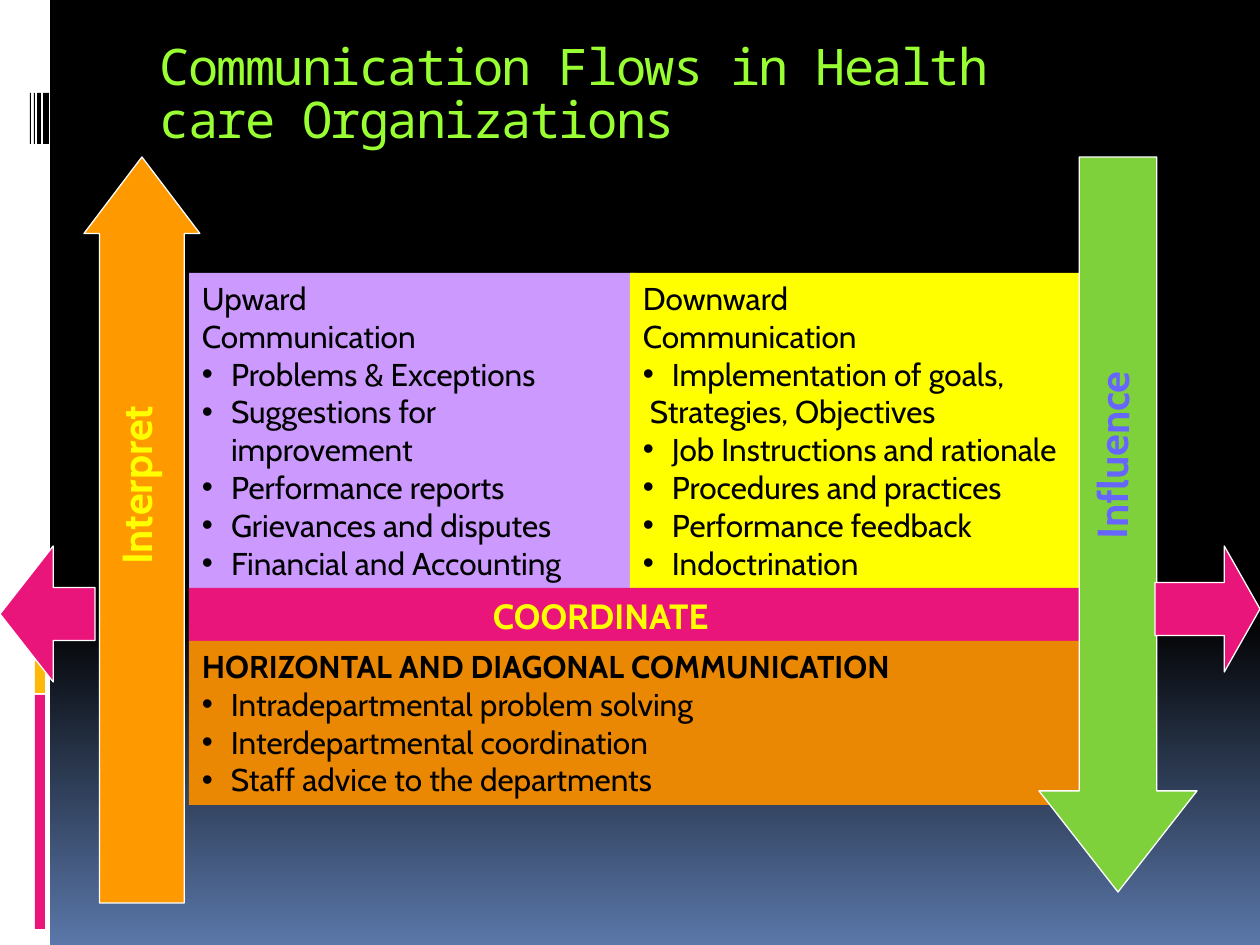
from lxml import etree
from pptx import Presentation
from pptx.dml.color import RGBColor
from pptx.enum.shapes import MSO_SHAPE
from pptx.enum.text import MSO_ANCHOR, PP_ALIGN
from pptx.oxml.ns import qn
from pptx.util import Pt

RECT = MSO_SHAPE.RECTANGLE
UP, DOWN = MSO_SHAPE.UP_ARROW, MSO_SHAPE.DOWN_ARROW
LEFT, RIGHT = MSO_SHAPE.LEFT_ARROW, MSO_SHAPE.RIGHT_ARROW
TOP = MSO_ANCHOR.TOP
START = PP_ALIGN.LEFT

SCALE = 914400 / 126
PAD_X, PAD_Y = 13, 6
HANG = 29
BODY, MONO = "Cabin", "Noto Sans Mono"
COLORS = {
    "white": "FFFFFF", "black": "000000", "pink": "EA157A",
    "gold": "FEB80A", "lime": "99FF33", "lilac": "CC99FF",
    "yellow": "FFFF00", "amber": "EB8803", "orange": "FF9900",
    "green": "7FD13B", "violet": "6666FF", "blue": "5A77A9",
}

UPWARD = ["Upward", "Communication", "• Problems & Exceptions",
          "• Suggestions for\vimprovement", "• Performance reports",
          "• Grievances and disputes", "• Financial and Accounting"]
DOWNWARD = ["Downward", "Communication", "• Implementation of goals,",
            "> Strategies, Objectives", "• Job Instructions and rationale",
            "• Procedures and practices", "• Performance feedback",
            "• Indoctrination"]
ACROSS = ["HORIZONTAL AND DIAGONAL COMMUNICATION",
          "• Intradepartmental problem solving",
          "• Interdepartmental coordination",
          "• Staff advice to the departments"]


def px(n):
    return round(n * SCALE)


def rgb(name):
    return RGBColor.from_string(COLORS[name])


def add_shape(slide, kind, box, fill, line=None):
    shape = slide.shapes.add_shape(kind, *map(px, box))
    shape.shadow.inherit = False
    shape.fill.solid()
    shape.fill.fore_color.rgb = rgb(fill)
    if line:
        shape.line.color.rgb = rgb(line)
        shape.line.width = Pt(0.75)
    else:
        shape.line.fill.background()
    return shape


def add_arrow(slide, kind, box, fill, shaft, head):
    arrow = add_shape(slide, kind, box, fill, "white")
    arrow.adjustments[0] = shaft
    arrow.adjustments[1] = head


def set_frame(shape, inset=PAD_X):
    frame = shape.text_frame
    frame.word_wrap = True
    frame.vertical_anchor = TOP
    frame.margin_left, frame.margin_right = px(inset), px(PAD_X)
    frame.margin_top = frame.margin_bottom = px(PAD_Y)
    return frame


def set_font(para, size, color, bold=False, face=BODY):
    para.alignment = START
    font = para.font
    font.name, font.size, font.bold = face, Pt(size), bold
    font.color.rgb = rgb(color)


def set_indent(para, left, first=0, bullet=None):
    props = para._p.get_or_add_pPr()
    props.set("marL", str(px(left)))
    props.set("indent", str(px(first)))
    if bullet:
        face = etree.Element(qn("a:buFont"), typeface="Arial")
        mark = etree.Element(qn("a:buChar"), char=bullet)
        props.insert(0, face)
        props.insert(1, mark)


def add_panel(slide, box, fill, lines, bold_head=False):
    """Lines led by • are bullets; those led by > are slightly indented."""
    frame = set_frame(add_shape(slide, RECT, box, fill))
    for i, line in enumerate(lines):
        para = frame.add_paragraph() if i else frame.paragraphs[0]
        para.text = line.lstrip("•> ")
        if line[0] == "•":
            set_indent(para, HANG, -HANG, "•")
        elif line[0] == ">":
            set_indent(para, 7)
        set_font(para, 18, "black", bold_head and i == 0)


def add_text(slide, box, text, size, color, bold=True, face=BODY, turn=0):
    shape = slide.shapes.add_textbox(*map(px, box))
    shape.rotation = turn
    para = set_frame(shape).paragraphs[0]
    para.text = text
    set_font(para, size, color, bold, face)
    return para


def add_back(slide):
    fill = slide.background.fill
    fill.gradient()
    fill.gradient_angle = 270
    for stop, (place, color) in zip(fill.gradient_stops,
                                    [(0.65, "black"), (1, "blue")]):
        stop.position = place
        stop.color.rgb = rgb(color)


def add_edge(slide):
    add_shape(slide, RECT, (0, 0, 50, 945), "white")
    add_shape(slide, RECT, (35, 695, 10, 234), "pink")
    add_shape(slide, RECT, (35, 661, 10, 32), "gold")
    for left, width in [(43, 6), (37, 4), (34, 1), (30, 1)]:
        add_shape(slide, RECT, (left, 93, width, 51), "black")


def add_title(slide):
    para = add_text(slide, (147, 37, 955, 126),
                    "Communication Flows in Health care Organizations",
                    28.8, "lime", False, MONO)
    para.line_spacing = 0.88
    para._p.pPr.find(qn("a:defRPr")).set("spc", "-100")


def add_bar(slide):
    bar = add_shape(slide, RECT, (189, 588, 892, 54), "pink")
    para = set_frame(bar, 304).paragraphs[0]
    para.text = "COORDINATE"
    set_font(para, 20, "yellow", True)


def main():
    deck = Presentation()
    deck.slide_width, deck.slide_height = px(1260), px(945)
    slide = deck.slides.add_slide(deck.slide_layouts[6])
    add_back(slide)
    add_edge(slide)
    add_title(slide)
    add_panel(slide, (189, 273, 447, 315), "lilac", UPWARD)
    add_panel(slide, (630, 273, 452, 315), "yellow", DOWNWARD)
    add_bar(slide)
    add_panel(slide, (189, 641, 892, 164), "amber", ACROSS, True)
    add_arrow(slide, UP, (84, 157, 116, 746), "orange", 0.73, 0.66)
    add_text(slide, (26, 436, 220, 63), "Interpret", 24, "yellow", turn=270)
    add_arrow(slide, DOWN, (1039, 157, 158, 735), "green", 0.49, 0.64)
    add_text(slide, (999, 407, 227, 63), "Influence", 24, "violet", turn=270.6)
    add_arrow(slide, RIGHT, (1155, 546, 105, 126), "pink", 0.42, 0.34)
    add_arrow(slide, LEFT, (0, 546, 95, 136), "pink", 0.39, 0.56)
    deck.save("out.pptx")


if __name__ == "__main__":
    main()
